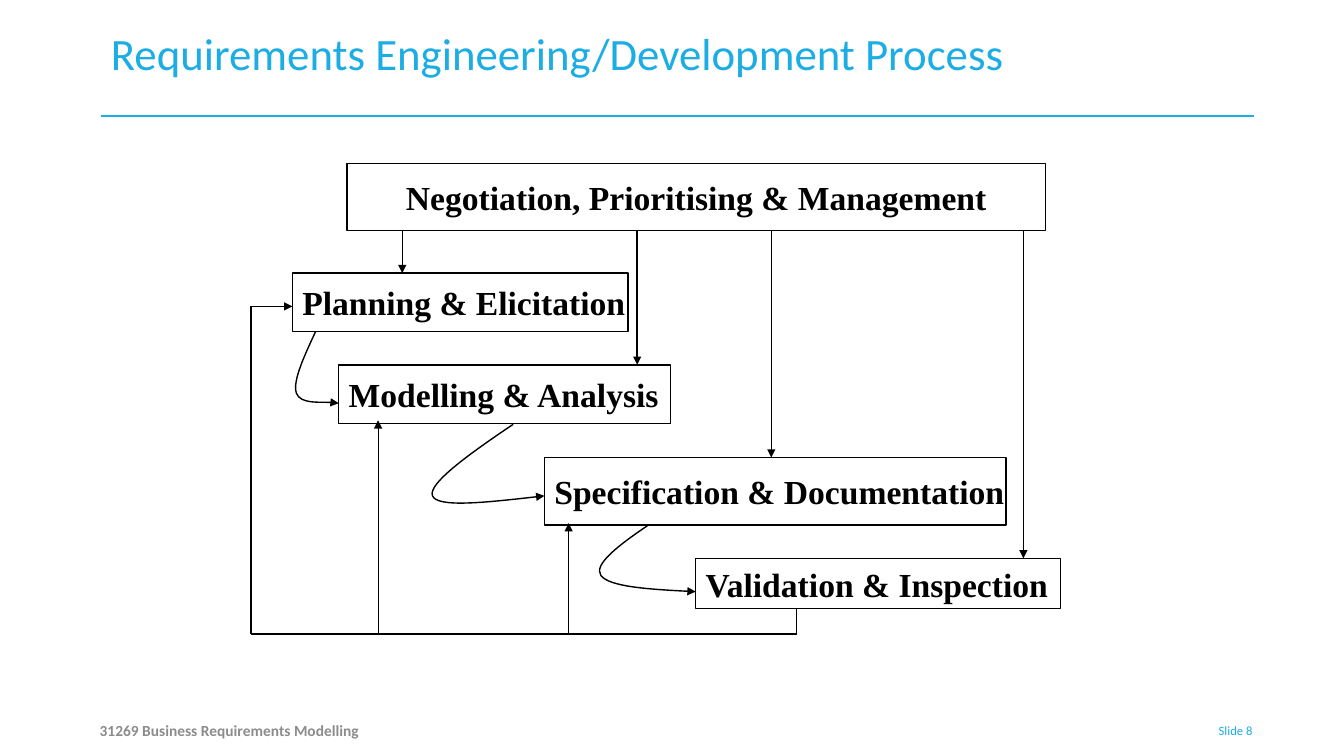
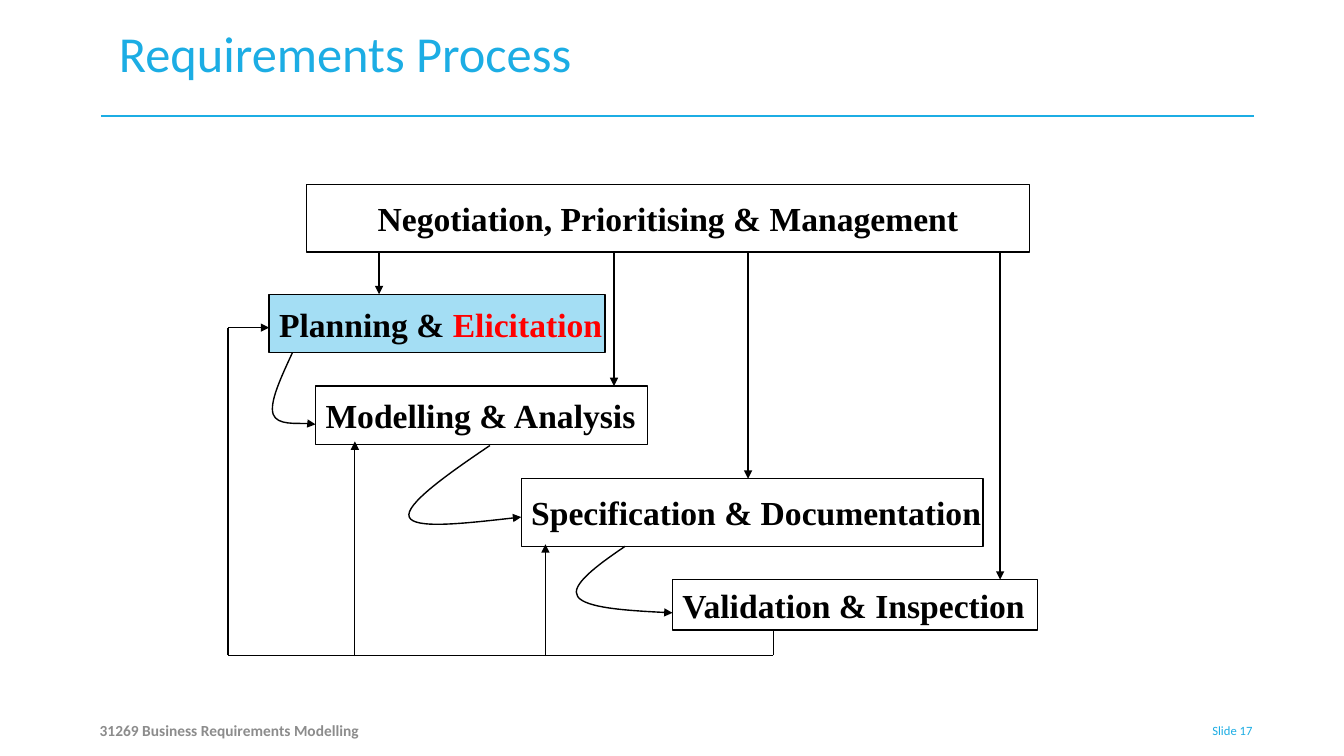
from typing import NamedTuple

from pptx import Presentation
from pptx.dml.color import RGBColor
from pptx.enum.shapes import MSO_CONNECTOR as Connector, MSO_SHAPE as Preset
from pptx.enum.text import MSO_ANCHOR as Anchor, MSO_AUTO_SIZE as AutoSize, PP_ALIGN as Align
from pptx.oxml.ns import qn
from pptx.oxml.xmlchemy import OxmlElement
from pptx.util import Emu, Pt

EMU_PER_PX = 9144  # 100 px to the inch
BLUE, GREY, BLACK, WHITE = "1CADE4", "8C8C8C", "000000", "FFFFFF"
LIGHT_BLUE, RED = "A4DEF4", "FF0000"
SANS, SERIF = "Calibri", "Times New Roman"
FOOTER = "31269 Business Requirements Modelling"


class Run(NamedTuple):
    text: str
    color: str = BLACK


class Frame(NamedTuple):
    left: int
    top: int
    width: int
    height: int


class Box(NamedTuple):
    frame: Frame
    runs: tuple[Run, ...]
    fill: str = WHITE
    align: Align = Align.LEFT


class Line(NamedTuple):
    x1: int
    y1: int
    x2: int
    y2: int
    arrow: bool = True
    weight: float = 1


class ProcessSlide(NamedTuple):
    title: str
    title_frame: Frame
    title_size: int
    number: int
    dx: int
    dy: int
    management: Frame
    planning: tuple[Run, ...]
    planning_fill: str


STAGES = (
    Box(Frame(336, 362, 329, 58), (Run("Modelling & Analysis"),)),
    Box(Frame(540, 454, 458, 67), (Run("Specification & Documentation"),)),
    Box(Frame(690, 554, 362, 50), (Run("Validation & Inspection"),)),
)
PLANNING = Frame(290, 271, 333, 58)
# Each curve is a start point followed by two cubic segments.
CURVES = (
    ((313, 329), (302, 353), (290, 378), (294, 390), (298, 401), (329, 398), (336, 400)),
    ((509, 421), (466, 450), (424, 480), (429, 492), (434, 504), (487, 498), (540, 492)),
    ((643, 521), (615, 540), (588, 560), (596, 571), (604, 582), (647, 585), (690, 587)),
)
MANAGEMENT_ARROWS = tuple(
    Line(x, 229, x, bottom)
    for x, bottom in ((399, 271), (632, 362), (765, 454), (1015, 554))
)
FEEDBACK = (
    Line(790, 604, 790, 629, arrow=False),
    Line(790, 629, 249, 629, arrow=False),
    Line(249, 629, 249, 304, arrow=False),
    Line(249, 304, 290, 304),
    Line(564, 630, 564, 519, weight=0.75),
    Line(375, 630, 375, 417, weight=0.75),
)

SLIDES = (
    ProcessSlide("Requirements Engineering/Development Process",
                 Frame(100, 20, 1067, 92), 32, 8, 0, 0, Frame(344, 162, 693, 67),
                 (Run("Planning & Elicitation"),), WHITE),
    ProcessSlide("Requirements Process",
                 Frame(108, 17, 1002, 100), 36, 17, -23, 21, Frame(304, 183, 717, 67),
                 (Run("Planning & "), Run("Elicitation", RED)), LIGHT_BLUE),
)


def px(length: int) -> Emu:
    return Emu(length * EMU_PER_PX)


def rgb(color: str) -> RGBColor:
    return RGBColor.from_string(color)


def place(frame: Frame) -> tuple[Emu, ...]:
    return tuple(px(length) for length in frame)


def write(shape, *runs: Run, font: str, size: float, bold: bool = False,
          align: Align = Align.LEFT, anchor: Anchor = Anchor.MIDDLE,
          wrap: bool = True) -> None:
    text_frame = shape.text_frame
    text_frame.auto_size = AutoSize.NONE
    text_frame.word_wrap = wrap
    text_frame.vertical_anchor = anchor
    paragraph = text_frame.paragraphs[0]
    paragraph.alignment = align
    for item in runs:
        run = paragraph.add_run()
        run.text = item.text
        run.font.name, run.font.size, run.font.bold = font, Pt(size), bold
        run.font.color.rgb = rgb(item.color)


def style_line(shape, color: str = BLACK, weight: float = 1, arrow: bool = False) -> None:
    line = shape.line
    line.color.rgb = rgb(color)
    line.width = Pt(weight)
    if arrow:
        tail = OxmlElement("a:tailEnd")
        tail.set("type", "triangle")
        line._get_or_add_ln().append(tail)


def draw_line(slide, line: Line, color: str = BLACK) -> None:
    connector = slide.shapes.add_connector(
        Connector.STRAIGHT, px(line.x1), px(line.y1), px(line.x2), px(line.y2))
    style_line(connector, color, line.weight, line.arrow)
    connector._element.spPr.append(OxmlElement("a:effectLst"))


def draw_box(slide, box: Box) -> None:
    shape = slide.shapes.add_shape(Preset.RECTANGLE, *place(box.frame))
    shape.shadow.inherit = False
    shape.fill.solid()
    shape.fill.fore_color.rgb = rgb(box.fill)
    style_line(shape)
    write(shape, *box.runs, font=SERIF, size=24, bold=True, align=box.align, wrap=False)


def draw_curve(slide, points: list[tuple[int, int]]) -> None:
    """Draw an arrow through cubic segments, three points to a segment."""
    builder = slide.shapes.build_freeform(*points[0], scale=EMU_PER_PX)
    builder.add_line_segments(points[1:], close=False)
    shape = builder.convert_to_shape()
    steps = shape._element.xpath(".//a:lnTo")
    for start in range(0, len(steps), 3):
        segment = OxmlElement("a:cubicBezTo")
        steps[start].addprevious(segment)
        for step in steps[start:start + 3]:
            segment.append(step.find(qn("a:pt")))
            step.getparent().remove(step)
    shape.shadow.inherit = False
    shape.fill.background()
    style_line(shape, arrow=True)


def add_label(slide, frame: Frame, run: Run, **text_format) -> None:
    write(slide.shapes.add_textbox(*place(frame)), run, font=SANS, **text_format)


def draw_furniture(slide, content: ProcessSlide) -> None:
    """Add the title, its rule and the footer."""
    draw_line(slide, Line(100, 115, 1244, 115, arrow=False), BLUE)
    title = slide.shapes.title
    title.left, title.top, title.width, title.height = place(content.title_frame)
    write(title, Run(content.title, BLUE), font=SANS, size=content.title_size,
          anchor=Anchor.TOP)
    add_label(slide, Frame(89, 705, 674, 40), Run(FOOTER, GREY), size=11, bold=True)
    add_label(slide, Frame(1160, 705, 92, 40), Run(f"Slide {content.number}", BLUE),
              size=9, align=Align.RIGHT)


def draw_process(slide, content: ProcessSlide) -> None:
    dx, dy = content.dx, content.dy
    for box in (Box(PLANNING, content.planning, content.planning_fill), *STAGES):
        frame = box.frame
        moved = frame._replace(left=frame.left + dx, top=frame.top + dy)
        draw_box(slide, box._replace(frame=moved))
    draw_box(slide, Box(content.management, (Run("Negotiation, Prioritising & Management"),),
                        align=Align.CENTER))
    for curve in CURVES:
        draw_curve(slide, [(x + dx, y + dy) for x, y in curve])
    for line in MANAGEMENT_ARROWS + FEEDBACK:
        draw_line(slide, line._replace(x1=line.x1 + dx, y1=line.y1 + dy,
                                       x2=line.x2 + dx, y2=line.y2 + dy))


def main() -> None:
    presentation = Presentation()
    presentation.slide_width, presentation.slide_height = px(1333), px(750)
    title_only = presentation.slide_layouts[5]
    for content in SLIDES:
        slide = presentation.slides.add_slide(title_only)
        draw_furniture(slide, content)
        draw_process(slide, content)
    presentation.save("out.pptx")


if __name__ == "__main__":
    main()
